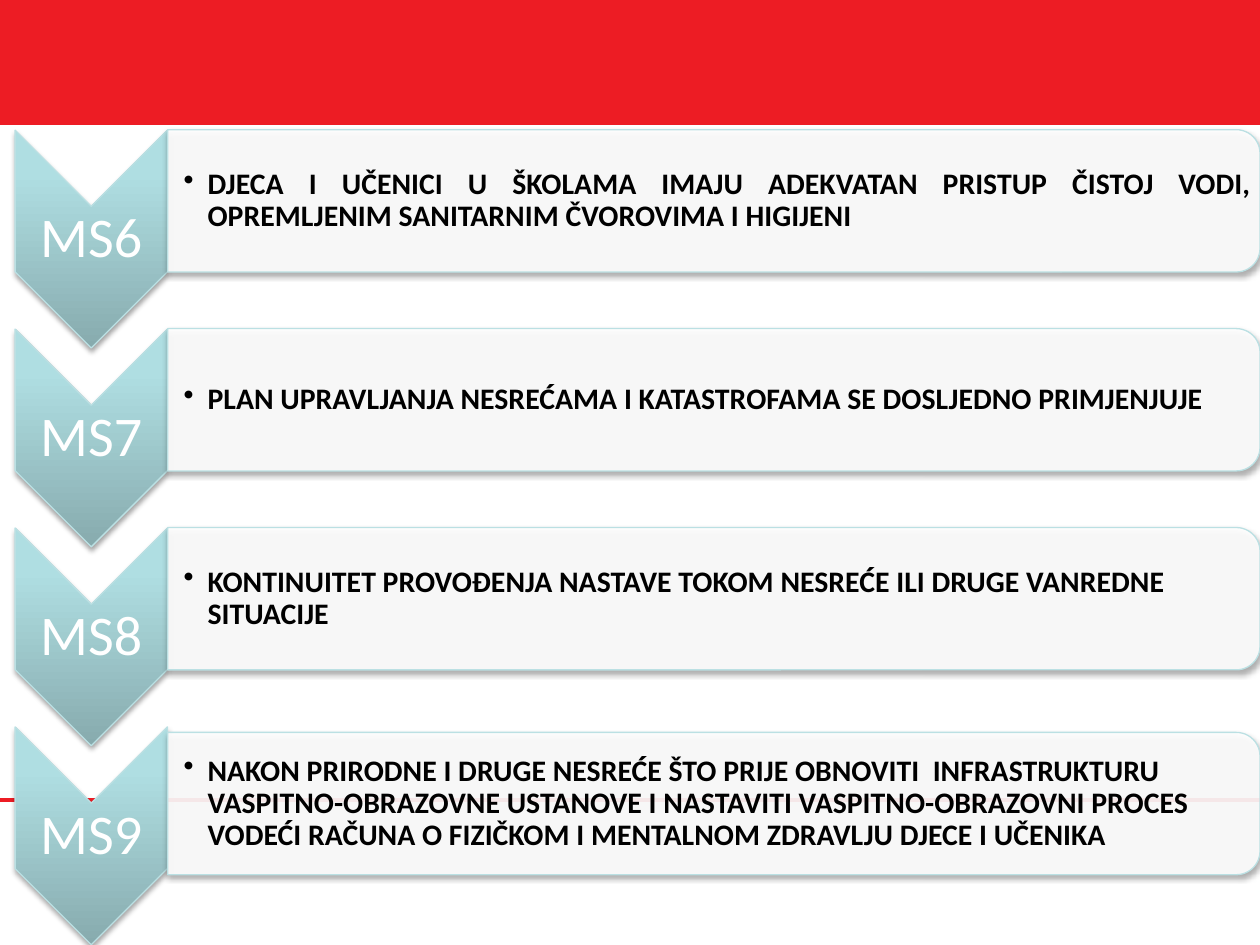
from lxml import etree
from pptx import Presentation
from pptx.dml.color import RGBColor
from pptx.enum.shapes import MSO_CONNECTOR, MSO_SHAPE
from pptx.enum.text import MSO_ANCHOR, PP_ALIGN
from pptx.oxml import parse_xml
from pptx.oxml.ns import nsdecls, qn
from pptx.util import Cm, Pt

RECT, CHEVRON = MSO_SHAPE.RECTANGLE, MSO_SHAPE.CHEVRON
ROUND = MSO_SHAPE.ROUND_2_SAME_RECTANGLE
MID = MSO_ANCHOR.MIDDLE
LEFT, CENTER, FULL = PP_ALIGN.LEFT, PP_ALIGN.CENTER, PP_ALIGN.JUSTIFY

# Content: label, text, alignment, extra drop of the bar
ROWS = [
    ("MS6", "DJECA I UČENICI U ŠKOLAMA IMAJU ADEKVATAN PRISTUP ČISTOJ VODI, "
            "OPREMLJENIM SANITARNIM ČVOROVIMA I HIGIJENI", FULL, 0),
    ("MS7", "PLAN UPRAVLJANJA NESREĆAMA I KATASTROFAMA SE DOSLJEDNO "
            "PRIMJENJUJE", LEFT, 0),
    ("MS8", "KONTINUITET PROVOĐENJA NASTAVE TOKOM NESREĆE ILI DRUGE "
            "VANREDNE SITUACIJE", LEFT, 0),
    ("MS9", "NAKON PRIRODNE I DRUGE NESREĆE ŠTO PRIJE OBNOVITI  "
            "INFRASTRUKTURU VASPITNO-OBRAZOVNE USTANOVE I NASTAVITI "
            "VASPITNO-OBRAZOVNI PROCES VODEĆI RAČUNA O FIZIČKOM I "
            "MENTALNOM ZDRAVLJU DJECE I UČENIKA", LEFT, 0.12),
]
HEX = {"red": "ED1C24", "edge": "BBE0E3", "white": "FFFFFF", "black": "000000"}
GRAD = [(0, "87ABAE"), (80, "AFDEE2"), (100, "AFE0E4")]
FONT = "Calibri"

# Layout in cm
WIDE, HIGH = 25.4, 19.05
STEP = 4.01
ARROW_X, ARROW_Y, ARROW_W, ARROW_H = 1.84, 4.82, 4.39, 3.07
BAR_X, BAR_Y, BAR_W, BAR_H = 14.39, 4.05, 2.87, 22.02
TEXT_X, TEXT_W, TEXT_H = 14.31, 21.87, 2.59


def color(name):
    return RGBColor.from_string(HEX[name])


def place(x, y, w, h):
    """Box of size w by h around the centre x, y."""
    return Cm(x - w / 2), Cm(y - h / 2), Cm(w), Cm(h)


def turned(parts, kind, *spot):
    """Shape turned by a quarter, with thin edge and soft shadow."""
    shape = parts.add_shape(kind, *place(*spot))
    shape.rotation = 90
    shape.fill.solid()
    shape.fill.fore_color.rgb = color("white")
    shape.line.color.rgb = color("edge")
    shape.line.width = Pt(0.75)
    shape._element.spPr.append(parse_xml(
        f'<a:effectLst {nsdecls("a")}><a:outerShdw blurRad="39370" '
        'dist="22860" dir="5400000" rotWithShape="0"><a:srgbClr val="000000">'
        '<a:alpha val="35000"/></a:srgbClr></a:outerShdw></a:effectLst>'))
    return shape


def shade(shape):
    """Gradient that stays upright when the shape is turned."""
    stops = "".join(f'<a:gs pos="{pos * 1000}"><a:srgbClr val="{tone}"/></a:gs>'
                    for pos, tone in GRAD)
    props = shape._element.spPr
    props.replace(props.find(qn("a:solidFill")), parse_xml(
        f'<a:gradFill {nsdecls("a")} rotWithShape="0"><a:gsLst>{stops}'
        '</a:gsLst><a:lin ang="16200000" scaled="0"/></a:gradFill>'))


def write(parts, spot, text, size, tone, align, after, pads):
    """Text box with one paragraph; returns the paragraph."""
    frame = parts.add_textbox(*place(*spot)).text_frame
    frame.word_wrap = True
    frame.vertical_anchor = MID
    frame.margin_left = Cm(pads[0])
    frame.margin_right = frame.margin_top = frame.margin_bottom = Cm(pads[1])
    frame.text = text
    para = frame.paragraphs[0]
    para.alignment = align
    para.line_spacing = 0.9
    space = etree.SubElement(para._p.get_or_add_pPr(), qn("a:spcAft"))
    etree.SubElement(space, qn("a:spcPct")).set("val", str(after * 1000))
    font = para.runs[0].font
    font.name, font.size, font.color.rgb = FONT, Pt(size), color(tone)
    return para


def bullet(para):
    para.level = 1
    props = para._p.get_or_add_pPr()
    props.set("marL", str(Cm(0.48)))
    props.set("indent", str(-Cm(0.48)))
    etree.SubElement(props, qn("a:buChar")).set("char", "•")
    para.runs[0].font.bold = True


deck = Presentation()
deck.slide_width, deck.slide_height = Cm(WIDE), Cm(HIGH)
slide = deck.slides.add_slide(deck.slide_layouts[6])

# Red band and rule
band = slide.shapes.add_shape(RECT, 0, 0, Cm(WIDE), Cm(2.52))
band.shadow.inherit = False
band.fill.solid()
band.fill.fore_color.rgb = color("red")
band.line.fill.background()
rule = slide.shapes.add_connector(
    MSO_CONNECTOR.STRAIGHT, 0, Cm(16.13), Cm(WIDE), Cm(16.13))
rule.line.color.rgb = color("red")
rule.line.width = Pt(2)
etree.SubElement(rule._element.spPr, qn("a:effectLst"))

# Rows: arrow with label, bar with text
parts = slide.shapes.add_group_shape().shapes
for i, (label, text, align, drop) in enumerate(ROWS):
    mid = ARROW_Y + i * STEP
    shade(turned(parts, CHEVRON, ARROW_X, mid, ARROW_W, ARROW_H))
    write(parts, (ARROW_X, mid, ARROW_H, 1.32), label, 32, "white",
          CENTER, 35, (0.05, 0.05))

    mid = BAR_Y + i * STEP + drop
    bar = turned(parts, ROUND, BAR_X, mid, BAR_W, BAR_H)
    tint = bar._element.spPr.find(qn("a:solidFill"))[0]
    etree.SubElement(tint, qn("a:alpha")).set("val", "90000")
    bullet(write(parts, (TEXT_X, mid, TEXT_W, TEXT_H), text, 17, "black",
                 align, 15, (0.33, 0.03)))

deck.save("out.pptx")
